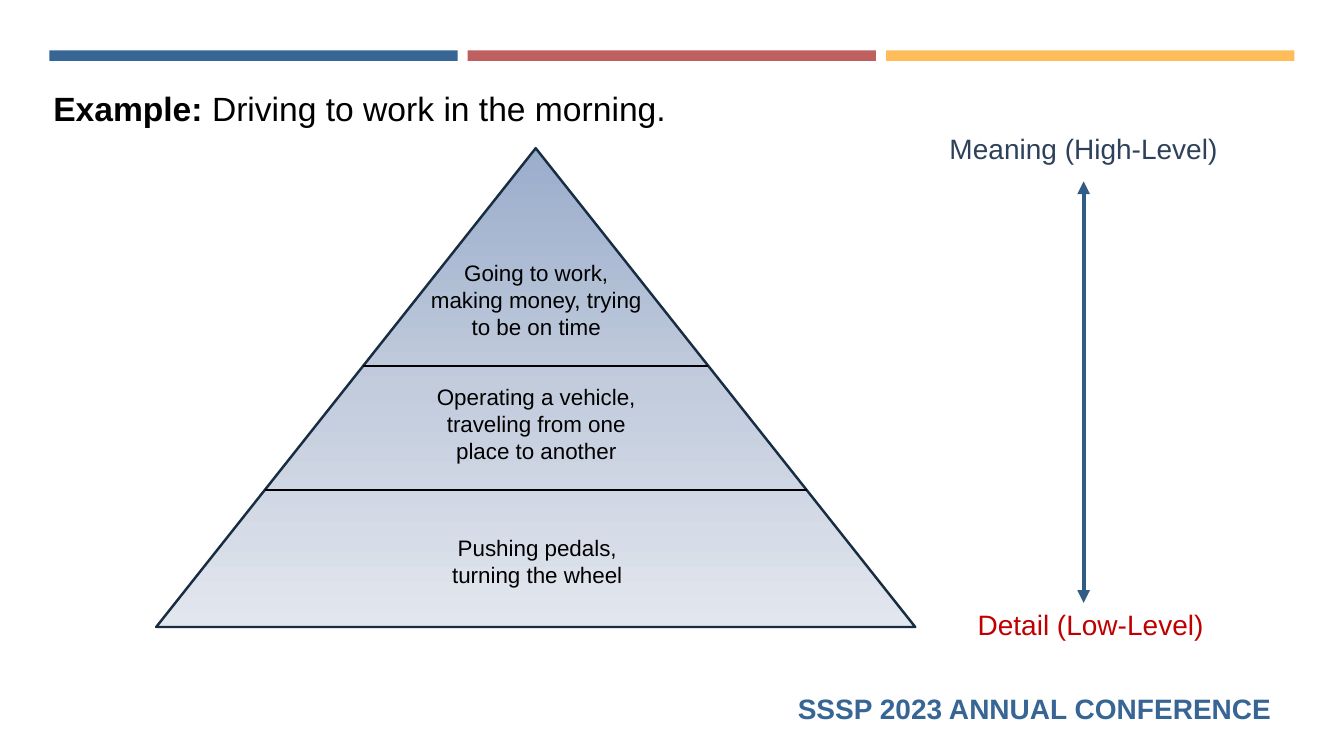
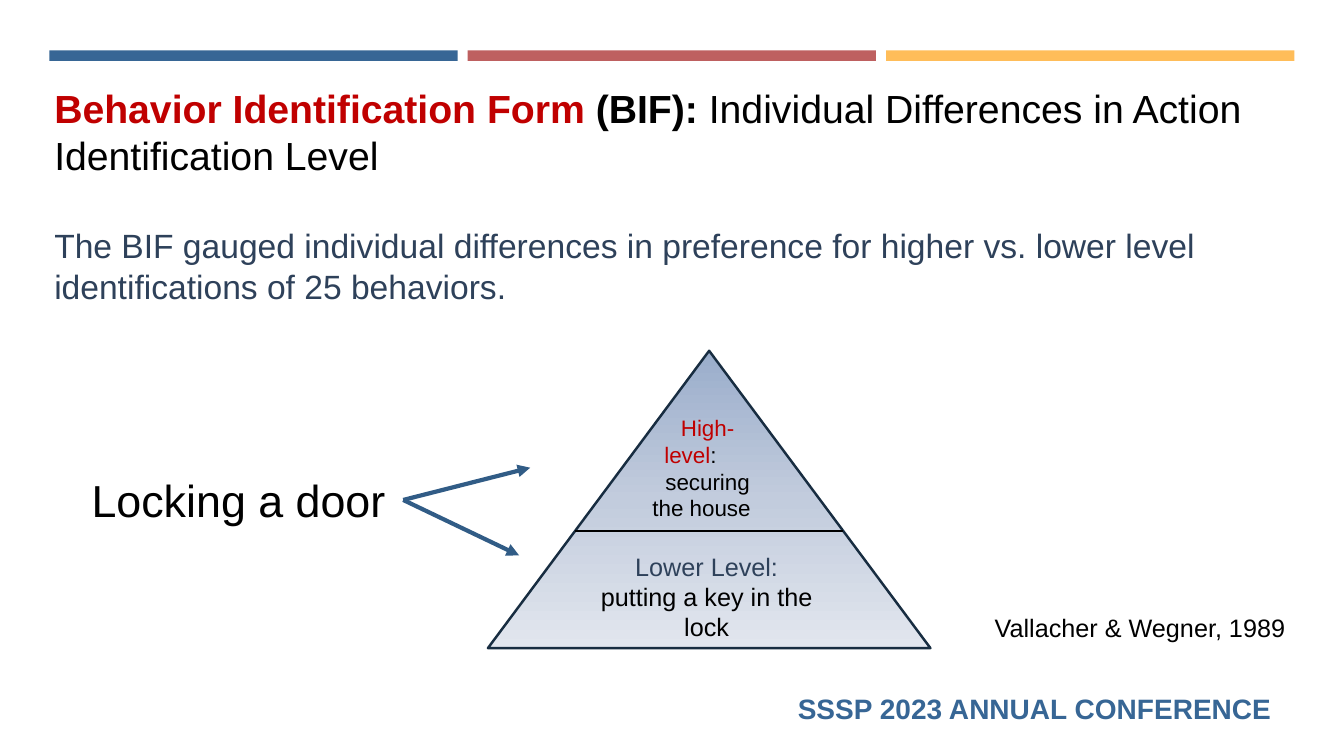
from copy import deepcopy

from lxml import etree
from pptx import Presentation
from pptx.dml.color import RGBColor
from pptx.enum.shapes import MSO_CONNECTOR, MSO_SHAPE
from pptx.enum.text import MSO_ANCHOR, PP_ALIGN
from pptx.oxml.ns import qn
from pptx.util import Inches, Pt

RECT, TRIANGLE = MSO_SHAPE.RECTANGLE, MSO_SHAPE.ISOSCELES_TRIANGLE
STRAIGHT = MSO_CONNECTOR.STRAIGHT
MIDDLE = MSO_ANCHOR.MIDDLE
LEFT, CENTER, RIGHT = PP_ALIGN.LEFT, PP_ALIGN.CENTER, PP_ALIGN.RIGHT

COLS, ROWS = 133.33, 75
CELL = Inches(0.1)

THEME = {
    "font": "Arial",
    "colors": {
        "blue": "376695", "rose": "BE6060", "gold": "FFBD59",
        "black": "000000", "red": "C00000", "slate": "2E415A",
        "arrow": "315C86", "outline": "182D41",
    },
    "gradient": [(0, "9AADCB"), (0.5, "C2CCDD"), (1, "E2E6EE")],
    "sizes": {"hero": 32, "title": 28, "lead": 24, "label": 20, "note": 18, "small": 16},
    "lines": {"arrow": 3, "outline": 1.75, "divider": 1},
}

BANDS = {"colors": ["blue", "rose", "gold"], "left": 4.9, "top": 5,
         "width": 40.5, "height": 1.05, "gap": 1}

FOOTER = {"at": (6.5, 67.9, 120.6, 4.8), "size": "label", "align": RIGHT,
          "paras": [[("SSSP 2023 ANNUAL CONFERENCE", "blue", True)]]}

SLIDES = [
    {
        "pyramid": {"at": (15.5, 14.7, 75.3, 47.5), "dividers": [36.3, 48.6]},
        "arrows": [((107.5, 18), (107.5, 59.8), ("headEnd", "tailEnd"))],
        "texts": [
            {"at": (20.6, 52.5, 65.4, 6.4), "size": "small", "align": CENTER,
             "paras": [[("Pushing pedals,", "black")], [("turning the wheel", "black")]]},
            {"at": (41.2, 37.5, 24, 9.1), "size": "small", "align": CENTER,
             "paras": [[("Operating a vehicle, traveling from one place to another", "black")]]},
            {"at": (41.2, 25.2, 24, 9.1), "size": "small", "align": CENTER,
             "paras": [[("Going to work,", "black")],
                       [("making money, trying to be on time", "black")]]},
            {"at": (4.3, 8.2, 86.5, 5), "size": "lead",
             "paras": [[("Example: ", "black", True),
                        ("Driving to work in the morning.", "black")]]},
            {"at": (87.5, 12.5, 40, 4.4), "size": "label", "align": CENTER,
             "paras": [[("Meaning (High-Level)", "slate")]]},
            {"at": (88.2, 59.7, 40, 4.4), "size": "label", "align": CENTER,
             "paras": [[("Detail (Low-Level)", "red")]]},
        ],
    },
    {
        "pyramid": {"at": (48.4, 34.8, 43.9, 29.5), "dividers": [52.7]},
        "arrows": [((40, 49.6), (52.6, 46.4), ("tailEnd",)),
                   ((40, 49.6), (51.5, 55.1), ("tailEnd",))],
        "texts": [
            {"at": (4.4, 7.8, 125.2, 10.4), "size": "title",
             "paras": [[("Behavior Identification Form ", "red", True),
                        ("(BIF): ", "black", True),
                        ("Individual Differences in Action Identification Level", "black")]]},
            {"at": (8.1, 46.4, 36, 6.4), "size": "hero",
             "paras": [[("Locking a door", "black")]]},
            {"at": (4.4, 21.8, 119, 9.1), "size": "lead",
             "paras": [[("The BIF gauged individual differences in preference for higher vs. "
                         "lower level identifications of 25 behaviors.", "slate")]]},
            {"at": (57, 54.1, 26.2, 10.1), "size": "note", "align": CENTER,
             "paras": [[("Lower Level:", "slate")], [("putting a key in the lock", "black")]]},
            {"at": (60.5, 40.5, 16, 11.8), "size": "small", "align": CENTER,
             "indents": [3.4, 0, 3.4, 2.2],
             "paras": [[("High-", "red")], [("level", "red"), (":", "black")],
                       [("securing", "black")], [("the house", "black")]]},
            {"at": (97.7, 60.2, 33, 4), "size": "note",
             "paras": [[("Vallacher & Wegner, 1989", "black")]]},
        ],
    },
]


def grid(cells):
    return [round(n * CELL) for n in cells]


def color(name):
    return RGBColor.from_string(THEME["colors"][name])


def set_all(obj, values):
    for name, value in values.items():
        setattr(obj, name, value)


def add_shape(s, kind, at):
    sp = s.shapes.add_shape(kind, *grid(at))
    sp.shadow.inherit = False
    return sp


def add_line(s, start, end, line_color, kind, heads=()):
    ln = s.shapes.add_connector(STRAIGHT, *grid(start + end))
    ln.line.color.rgb = color(line_color)
    ln.line.width = Pt(THEME["lines"][kind])
    for head in heads:
        etree.SubElement(ln.line._get_or_add_ln(), qn("a:" + head), type="triangle")
    etree.SubElement(ln._element.spPr, qn("a:effectLst"))


def add_text(s, at, size, paras, align=LEFT, indents=()):
    tf = s.shapes.add_textbox(*grid(at)).text_frame
    set_all(tf, {"word_wrap": True, "vertical_anchor": MIDDLE})
    for i, runs in enumerate(paras):
        p = tf.add_paragraph() if i else tf.paragraphs[0]
        p.alignment = align
        if indents:
            p._p.get_or_add_pPr().set("marL", str(grid([indents[i]])[0]))
        for text, ink, *bold in runs:
            r = p.add_run()
            r.text = text
            set_all(r.font, {"name": THEME["font"], "size": Pt(THEME["sizes"][size]),
                             "bold": bool(bold)})
            r.font.color.rgb = color(ink)


def add_bands(s):
    for i, name in enumerate(BANDS["colors"]):
        left = BANDS["left"] + i * (BANDS["width"] + BANDS["gap"])
        sp = add_shape(s, RECT, (left, BANDS["top"], BANDS["width"], BANDS["height"]))
        sp.fill.solid()
        sp.fill.fore_color.rgb = color(name)
        sp.line.fill.background()


def add_pyramid(s, at, dividers):
    left, top, width, height = at
    sp = add_shape(s, TRIANGLE, at)
    sp.fill.gradient()
    sp.fill.gradient_angle = 270
    stops = sp._element.spPr.find(qn("a:gradFill")).find(qn("a:gsLst"))
    stops.append(deepcopy(stops[0]))
    for stop, (position, rgb) in zip(sp.fill.gradient_stops, THEME["gradient"]):
        stop.position = position
        stop.color.rgb = RGBColor.from_string(rgb)
    sp.line.color.rgb = color("outline")
    sp.line.width = Pt(THEME["lines"]["outline"])
    middle = left + width / 2
    for y in dividers:
        half = width / 2 * (y - top) / height
        add_line(s, (middle - half, y), (middle + half, y), "black", "divider")


def main():
    prs = Presentation()
    prs.slide_width, prs.slide_height = grid((COLS, ROWS))
    for content in SLIDES:
        s = prs.slides.add_slide(prs.slide_layouts[6])
        add_bands(s)
        add_pyramid(s, **content["pyramid"])
        for start, end, heads in content["arrows"]:
            add_line(s, start, end, "arrow", "arrow", heads)
        for text in content["texts"] + [FOOTER]:
            add_text(s, **text)
    prs.save("out.pptx")


if __name__ == "__main__":
    main()
